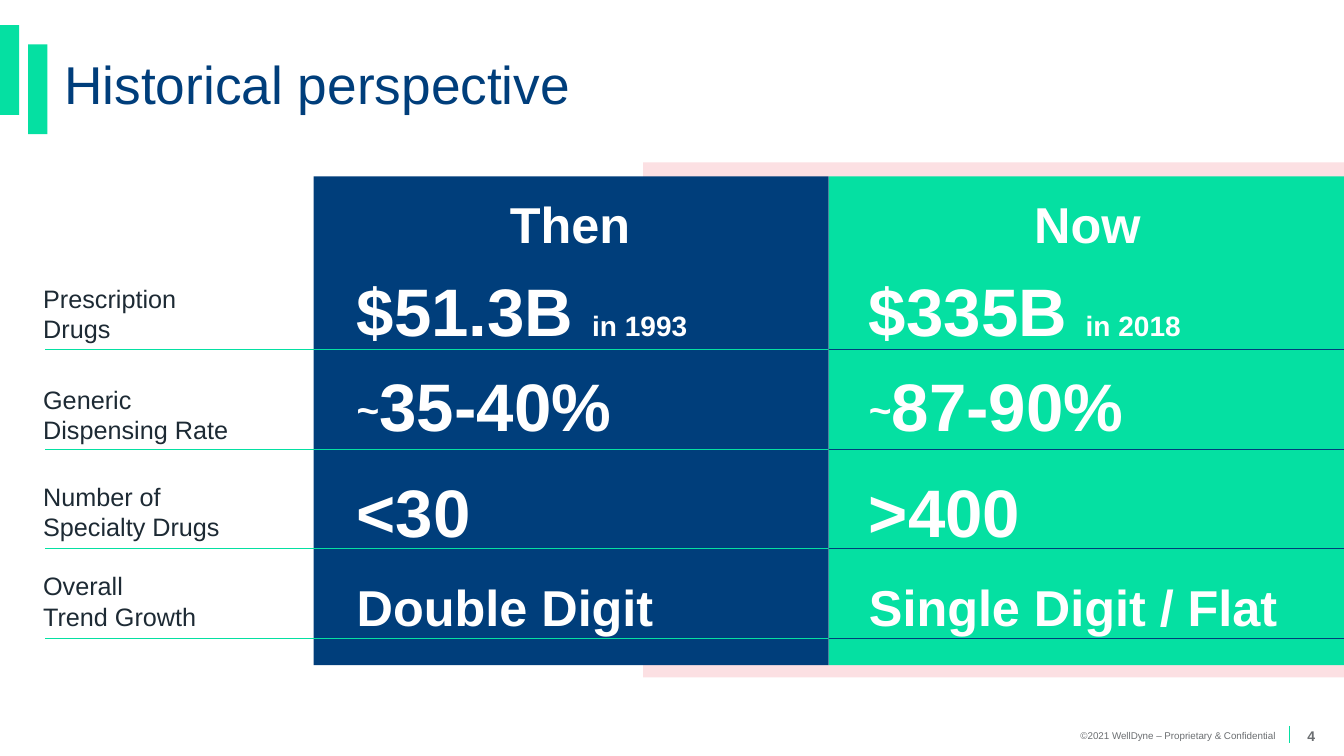
import pptx
import pptx.dml.color
import pptx.enum.shapes
import pptx.enum.text
import pptx.util
from lxml import etree

Inches = pptx.util.Inches
ALIGN = pptx.enum.text.PP_ALIGN
ANCHOR = pptx.enum.text.MSO_ANCHOR

# Content
TITLE = "Historical perspective"
COPYRIGHT = "©2021 WellDyne – Proprietary & Confidential"
PAGE_NUMBER = "4"

# Each value is a box width and its runs: (text, size name, raised)
ROWS = [
    {"label": "Prescription Drugs", "label_width": 2.12, "label_height": 0.85,
     "label_bottom": 3.46, "rule": 3.47, "value_bottom": 3.52, "value_height": 0.94,
     "spacing": 1.0,
     "values": [(3.8, [("$51.3B ", "figure", False), ("in 1993", "year", False)]),
                (3.46, [("$335B ", "figure", False), ("in 2018", "year", False)])]},
    {"label": "Generic\nDispensing Rate", "label_width": 2.28, "label_height": 0.9,
     "label_bottom": 4.46, "rule": 4.46, "value_bottom": 4.46, "value_height": 1.07,
     "spacing": 1.0,
     "values": [(4.1, [("~", "figure", True), ("35-40%", "figure", False)]),
                (3.72, [("~", "figure", True), ("87-90%", "figure", False)])]},
    {"label": "Number of Specialty Drugs", "label_width": 2.2, "label_height": 0.67,
     "label_bottom": 5.42, "rule": 5.44, "value_bottom": 5.51, "value_height": 0.76,
     "spacing": 0.8,
     "values": [(2.19, [("<30", "figure", False)]),
                (2.19, [(">400", "figure", False)])]},
    {"label": "Overall\nTrend Growth", "label_width": 2.2, "label_height": 0.67,
     "label_bottom": 6.31, "rule": 6.33, "value_bottom": 6.36, "value_height": 0.71,
     "spacing": 0.8,
     "values": [(4.56, [("Double Digit", "heading", False)]),
                (5.11, [("Single Digit / Flat", "heading", False)])]},
]

THEME = {
    "font": "Arial",
    "colors": {"navy": "003E7B", "green": "05E0A2", "pink": "FCE0E3",
               "ink": "1D2A34", "grey": "6B6E71", "white": "FFFFFF"},
    "sizes": {"title": 38, "heading": 36, "figure": 48, "year": 20,
              "label": 18, "copyright": 7, "page": 10},
}

# Column: heading, fill, panel left, heading left, value left, rule start, rule end, rule color
COLUMNS = [
    ("Then", "navy", 3.11, 3.1, 3.44, 0.45, 8.21, "green"),
    ("Now", "green", 8.22, 8.23, 8.52, 8.22, 13.33, "navy"),
]
PANEL_TOP, PANEL_WIDTH, PANEL_HEIGHT = 1.75, 5.11, 4.85
LABEL_LEFT = 0.33

deck = pptx.Presentation()
deck.slide_width, deck.slide_height = Inches(13.33), Inches(7.5)
slide = deck.slides.add_slide(deck.slide_layouts[6])


def color(name):
    return pptx.dml.color.RGBColor.from_string(THEME["colors"][name])


def add_panel(left, top, width, height, fill):
    panel = slide.shapes.add_shape(
        pptx.enum.shapes.MSO_SHAPE.RECTANGLE,
        Inches(left), Inches(top), Inches(width), Inches(height))
    panel.shadow.inherit = False
    panel.fill.solid()
    panel.fill.fore_color.rgb = color(fill)
    panel.line.fill.background()


def add_rule(x1, y1, x2, y2, stroke, weight):
    rule = slide.shapes.add_connector(
        pptx.enum.shapes.MSO_CONNECTOR.STRAIGHT,
        Inches(x1), Inches(y1), Inches(x2), Inches(y2))
    rule.line.color.rgb = color(stroke)
    rule.line.width = pptx.util.Pt(weight)
    etree.SubElement(rule._element.spPr, pptx.oxml.ns.qn("a:effectLst"))


def style_run(run, size, ink, bold):
    run.font.name = THEME["font"]
    run.font.size = pptx.util.Pt(THEME["sizes"][size])
    run.font.color.rgb = color(ink)
    run.font.bold = bold


def add_box(left, top, width, height, anchor, align=ALIGN.LEFT, spacing=1.0):
    box = slide.shapes.add_textbox(
        Inches(left), Inches(top), Inches(width), Inches(height))
    frame = box.text_frame
    frame.word_wrap = True
    frame.vertical_anchor = anchor
    paragraph = frame.paragraphs[0]
    paragraph.alignment = align
    paragraph.line_spacing = spacing
    return frame


def add_text(text, size, ink, bold, *place, **layout):
    frame = add_box(*place, **layout)
    paragraph = frame.paragraphs[0]
    paragraph.text = text
    for run in paragraph.runs:
        style_run(run, size, ink, bold)
    return frame


# Title with its two bars
for bar_left, bar_top in [(0, 0.25), (0.28, 0.44)]:
    add_panel(bar_left, bar_top, 0.19, 0.89, "green")
add_text(TITLE, "title", "navy", False, 0.54, 0.53, 12.5, 0.89, ANCHOR.TOP, spacing=0.9)

# Footer
add_rule(12.79, 7.2, 12.79, 7.37, "green", 1)
footer = add_text(COPYRIGHT, "copyright", "grey", False,
                  9.44, 7.1, 3.36, 0.4, ANCHOR.MIDDLE, align=ALIGN.RIGHT)
footer.margin_right = Inches(0.15)
add_text(PAGE_NUMBER, "page", "grey", True,
         12.78, 7.1, 0.45, 0.4, ANCHOR.MIDDLE, align=ALIGN.CENTER)

# Column panels and headings
add_panel(6.38, 1.61, 6.96, 5.11, "pink")
for heading, fill, panel_left, heading_left, *_ in COLUMNS:
    add_panel(panel_left, PANEL_TOP, PANEL_WIDTH, PANEL_HEIGHT, fill)
    add_text(heading, "heading", "white", True,
             heading_left, 1.87, PANEL_WIDTH, 1.02, ANCHOR.TOP, align=ALIGN.CENTER)

# Rows: label, rules and a value in each column
for row in ROWS:
    add_text(row["label"], "label", "ink", False,
             LABEL_LEFT, row["label_bottom"] - row["label_height"],
             row["label_width"], row["label_height"], ANCHOR.BOTTOM)
    for column, (value_width, pieces) in zip(COLUMNS, row["values"]):
        value_left, rule_start, rule_end, stroke = column[4:]
        add_rule(rule_start, row["rule"], rule_end, row["rule"], stroke, 0.5)
        value = add_box(value_left, row["value_bottom"] - row["value_height"],
                        value_width, row["value_height"], ANCHOR.BOTTOM,
                        spacing=row["spacing"])
        for text, size, raised in pieces:
            run = value.paragraphs[0].add_run()
            run.text = text
            style_run(run, size, "white", True)
            if raised:
                run._r.get_or_add_rPr().set("baseline", "10000")

deck.save("out.pptx")
